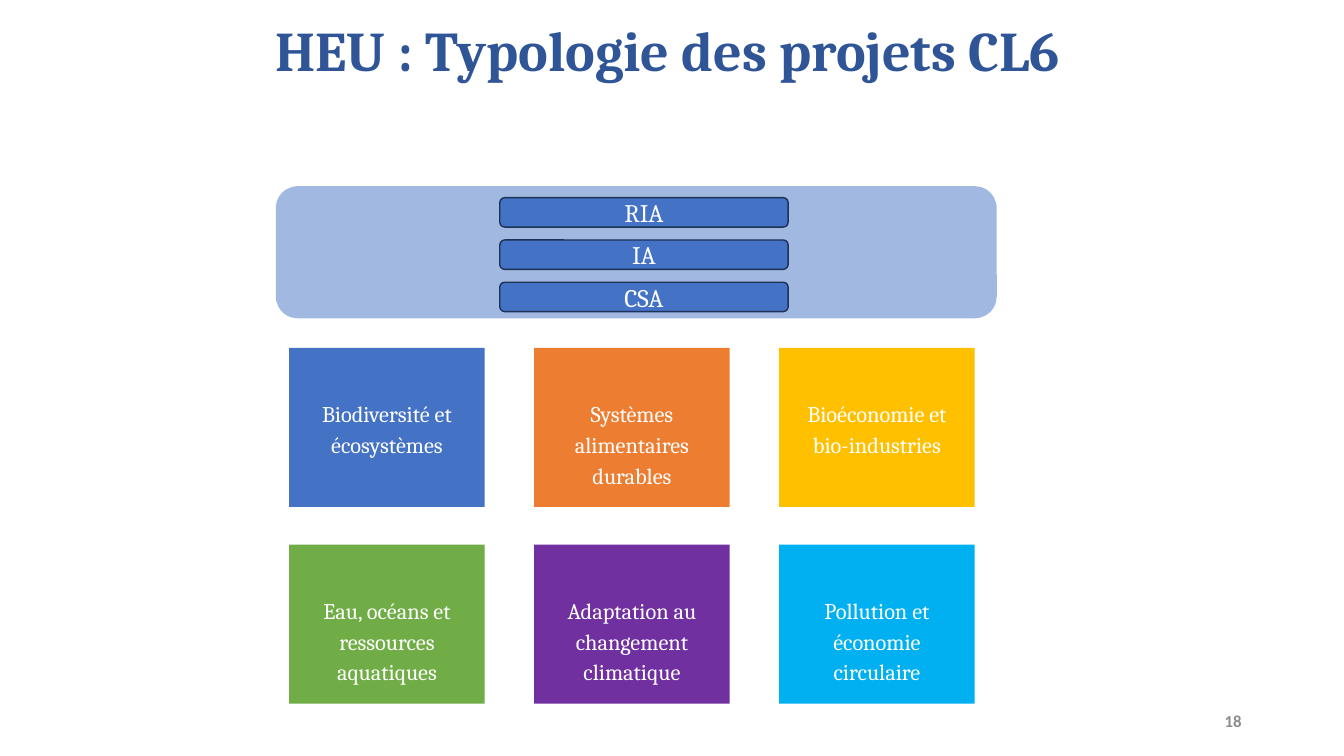
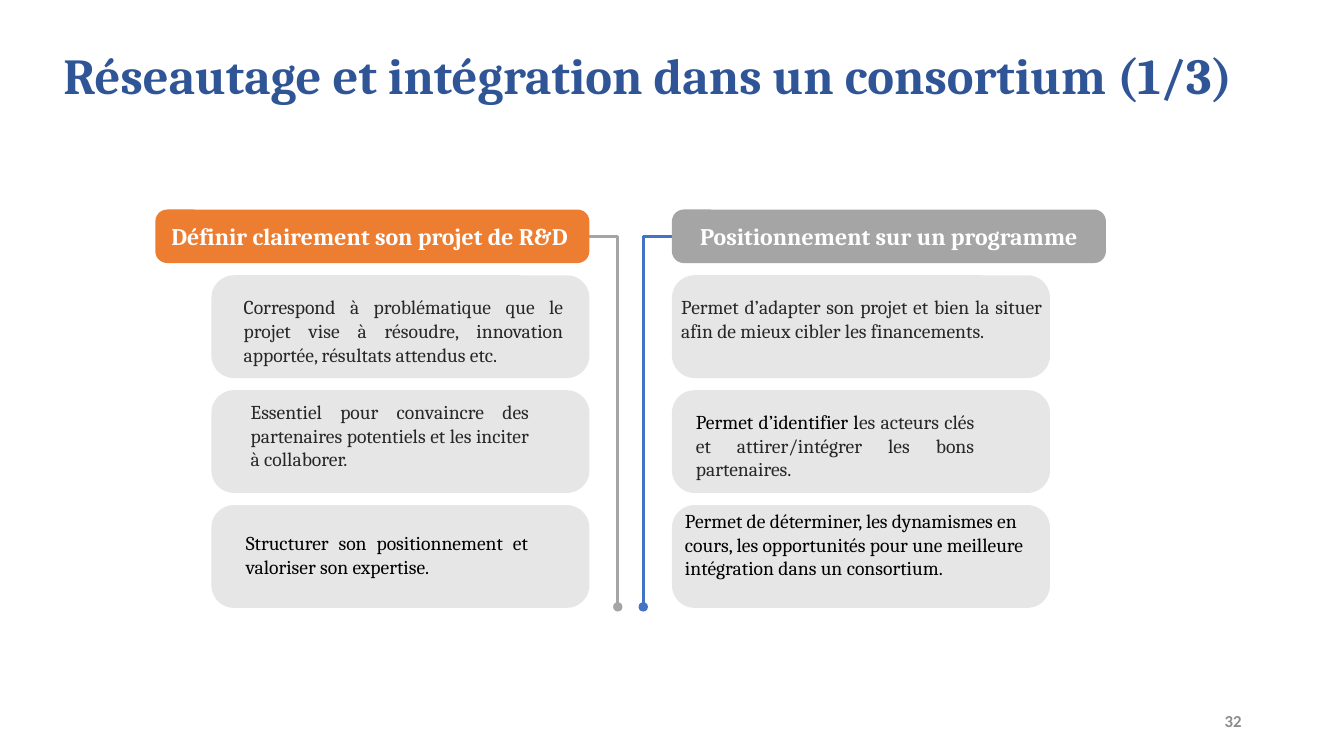
"""Build two slides on project types and on joining a consortium."""
from lxml import etree
from pptx import Presentation
from pptx.dml.color import RGBColor
from pptx.enum import shapes, text
from pptx.oxml import ns
from pptx.util import Pt

BLUE, NAVY, TITLE = "4472C4", "1E3256", "2F5597"
ORANGE, GREY, PALE = "ED7D31", "A5A5A5", "E7E6E6"
WHITE, BLACK, DARK, MUTED = "FFFFFF", "000000", "272727", "8C8C8C"
SERIF, SANS = "Cambria", "Calibri"
RECT = shapes.MSO_SHAPE.RECTANGLE
ROUND = shapes.MSO_SHAPE.ROUNDED_RECTANGLE
MID, TOP = text.MSO_ANCHOR.MIDDLE, text.MSO_ANCHOR.TOP
LEFT, RIGHT = text.PP_ALIGN.LEFT, text.PP_ALIGN.RIGHT
CENTER, FULL = text.PP_ALIGN.CENTER, text.PP_ALIGN.JUSTIFY


def rgb(code):
    """Turn a hex string into a colour."""
    return RGBColor.from_string(code)


def sub(parent, tag, **attrs):
    """Add a DrawingML child element."""
    return etree.SubElement(parent, ns.qn(tag), attrs)


def write(shape, runs, size, align=LEFT, anchor=TOP, pad=(7.2, 7.2),
          bold=False, font=SERIF, lead=1.0):
    """Fill a shape with one paragraph of (words, colour) runs."""
    frame = shape.text_frame
    frame.word_wrap = True
    frame.vertical_anchor = anchor
    frame.margin_left = frame.margin_right = Pt(pad[0])
    frame.margin_top = frame.margin_bottom = Pt(pad[1])
    para = frame.paragraphs[0]
    para.alignment, para.line_spacing = align, lead
    for words, color in runs:
        run = para.add_run()
        run.text = words
        run.font.name, run.font.size = font, Pt(size)
        run.font.bold = bold
        run.font.color.rgb = rgb(color)


def label(slide, area, runs, size, **style):
    """Add a text box."""
    box = slide.shapes.add_textbox(*map(Pt, area))
    write(box, runs, size, **style)


def block(slide, kind, area, fill, line=None, curve=None, alpha=None):
    """Add a filled shape, with an outline only if asked."""
    shape = slide.shapes.add_shape(kind, *map(Pt, area))
    shape.shadow.inherit = False
    shape.fill.solid()
    shape.fill.fore_color.rgb = rgb(fill)
    if alpha is not None:
        tint = shape.element.spPr.find(".//" + ns.qn("a:srgbClr"))
        sub(tint, "a:alpha", val=str(alpha * 1000))
    if line:
        shape.line.color.rgb = rgb(line)
        shape.line.width = Pt(1)
    else:
        shape.line.fill.background()
    if curve is not None:
        shape.adjustments[0] = curve
    return shape


def elbow(slide, start, end, color):
    """Add a one-bend connector that ends in a dot."""
    kind = shapes.MSO_CONNECTOR.ELBOW
    link = slide.shapes.add_connector(kind, *map(Pt, start + end))
    link.line.color.rgb = rgb(color)
    link.line.width = Pt(2.25)
    props = link.element.spPr
    props.find(ns.qn("a:prstGeom")).set("prst", "bentConnector2")
    sub(props.find(ns.qn("a:ln")), "a:tailEnd", type="oval")
    sub(props, "a:effectLst")


def page(deck, title, area, size, number):
    """Add a blank slide with its title and page number."""
    slide = deck.slides.add_slide(deck.slide_layouts[6])
    label(slide, area, [(title, TITLE)], size, anchor=MID, bold=True,
          pad=(7.2, 3.6), lead=0.9)
    label(slide, (678, 500.5, 216, 28.8), [(number, MUTED)], 12,
          align=RIGHT, anchor=MID, bold=True, font=SANS, pad=(7.2, 3.6))
    return slide


def themes(deck):
    """Draw the project types over a grid of themes."""
    slide = page(deck, "HEU : Typologie des projets CL6",
                 (189.4, 10.8, 729, 54), 40, "18")
    cards = [("Biodiversité et écosystèmes", BLUE),
             ("Systèmes alimentaires durables", ORANGE),
             ("Bioéconomie et bio-industries", "FFC000"),
             ("Eau, océans et ressources aquatiques", "70AD47"),
             ("Adaptation au changement climatique", "7030A0"),
             ("Pollution et économie circulaire", "00B0F0")]
    for i, (words, fill) in enumerate(cards):
        row, col = divmod(i, 3)
        area = (206.6 + 175 * col, 248.5 + 140.5 * row, 139.7, 113.6)
        card = block(slide, RECT, area, fill)
        write(card, [(words, WHITE)], 16, align=CENTER, pad=(14, 34.5),
              lead=1.15)
    block(slide, ROUND, (197, 133, 515, 94.4), BLUE, alpha=50)
    for i, name in enumerate(("RIA", "IA", "CSA")):
        bar = block(slide, ROUND, (357, 141.2 + 30.2 * i, 206, 21),
                    BLUE, line=NAVY)
        write(bar, [(name, WHITE)], 18, align=CENTER, anchor=MID,
              pad=(7.2, 0))


def network(deck):
    """Draw the two columns of advice."""
    slide = page(deck, "Réseautage et intégration dans un consortium (1/3)",
                 (38.2, 28.8, 882.7, 54), 36, "32")
    top, step, high, wide, head = 196.6, 82.1, 73.4, 270, 310
    inner, outer, mid, foot = 421, 480, 168.7, 433.5
    elbow(slide, (inner, mid), (441.3, foot), GREY)
    elbow(slide, (outer, mid), (459.5, foot), BLUE)
    heads = [(inner - head, "Définir clairement son projet de R&D ", ORANGE),
             (outer, "Positionnement sur un programme", GREY)]
    for x, words, fill in heads:
        bar = block(slide, ROUND, (x, 149.7, head, 38.2), fill, curve=0.22)
        write(bar, [(words, WHITE)], 17, align=CENTER, anchor=MID, bold=True)
    for i in range(3):
        for x in (inner - wide, outer):
            block(slide, ROUND, (x, top + step * i, wide, high), PALE,
                  curve=0.22)
    notes = [
        (167, 203.8, 242.6, FULL,
         [("Correspond à problématique que le projet vise à résoudre, "
           "innovation apportée, résultats attendus etc.", DARK)]),
        (172, 278.6, 213.1, FULL,
         [("Essentiel pour convaincre des partenaires potentiels et les "
           "inciter à collaborer.", DARK)]),
        (168.5, 372.2, 216, FULL,
         [("Structurer son positionnement et valoriser son expertise. ",
           BLACK)]),
        (479.5, 203.8, 272.2, FULL,
         [("Permet d’adapter son projet et bien la situer afin de mieux "
           "cibler les financements.", DARK)]),
        (490, 285.8, 213.1, FULL,
         [("Permet d’identifier l", BLACK),
          ("es acteurs clés et attirer/intégrer les bons partenaires.",
           DARK)]),
        (482.2, 356.4, 259.2, LEFT,
         [("Permet de déterminer, les dynamismes en cours, les opportunités "
           "pour une meilleure intégration dans un consortium.", BLACK)])]
    for x, y, span, align, runs in notes:
        label(slide, (x, y, span, 33), runs, 14, align=align)


def main():
    """Build and save the deck."""
    deck = Presentation()
    deck.slide_width, deck.slide_height = Pt(960), Pt(540)
    themes(deck)
    network(deck)
    deck.save("out.pptx")


if __name__ == "__main__":
    main()
